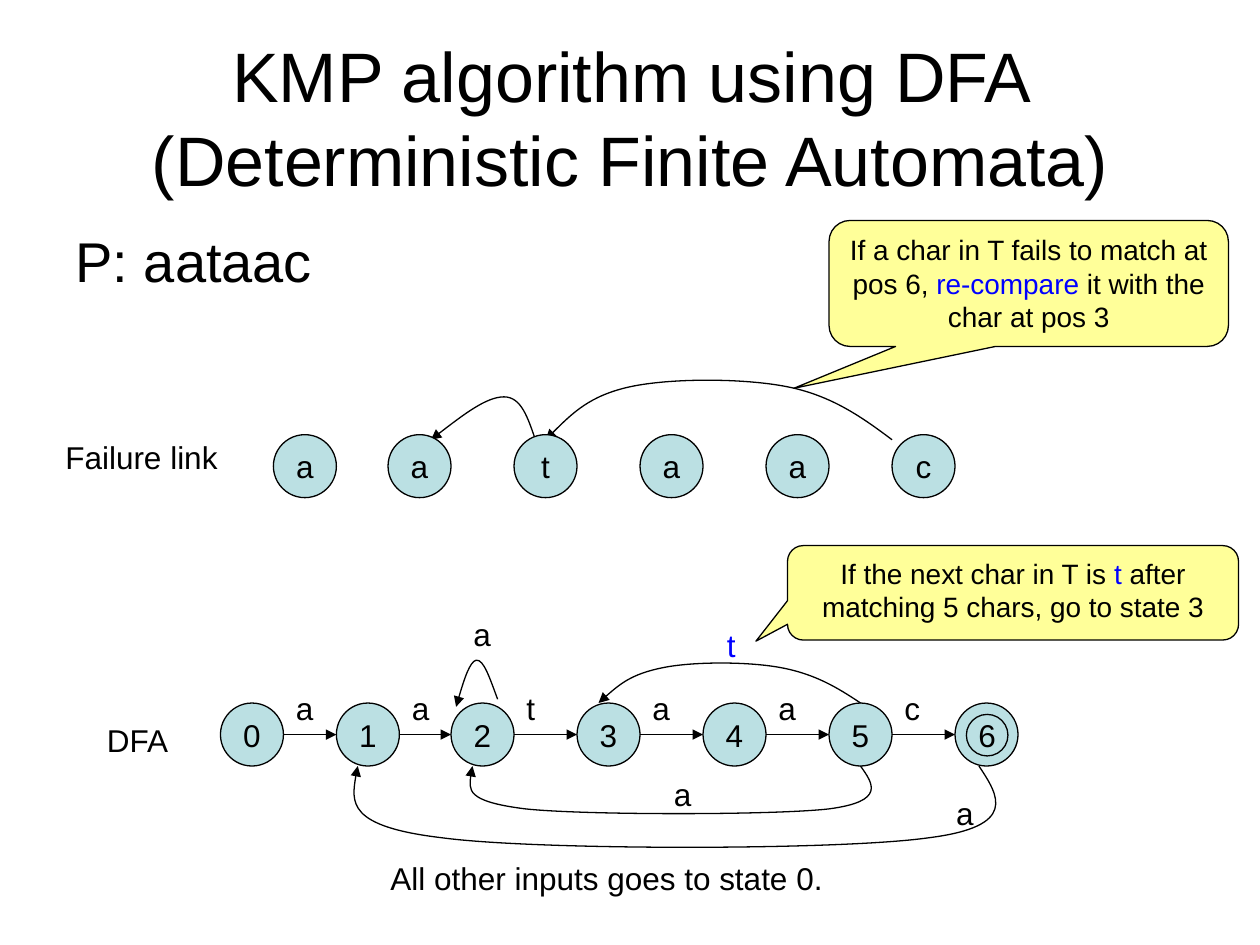
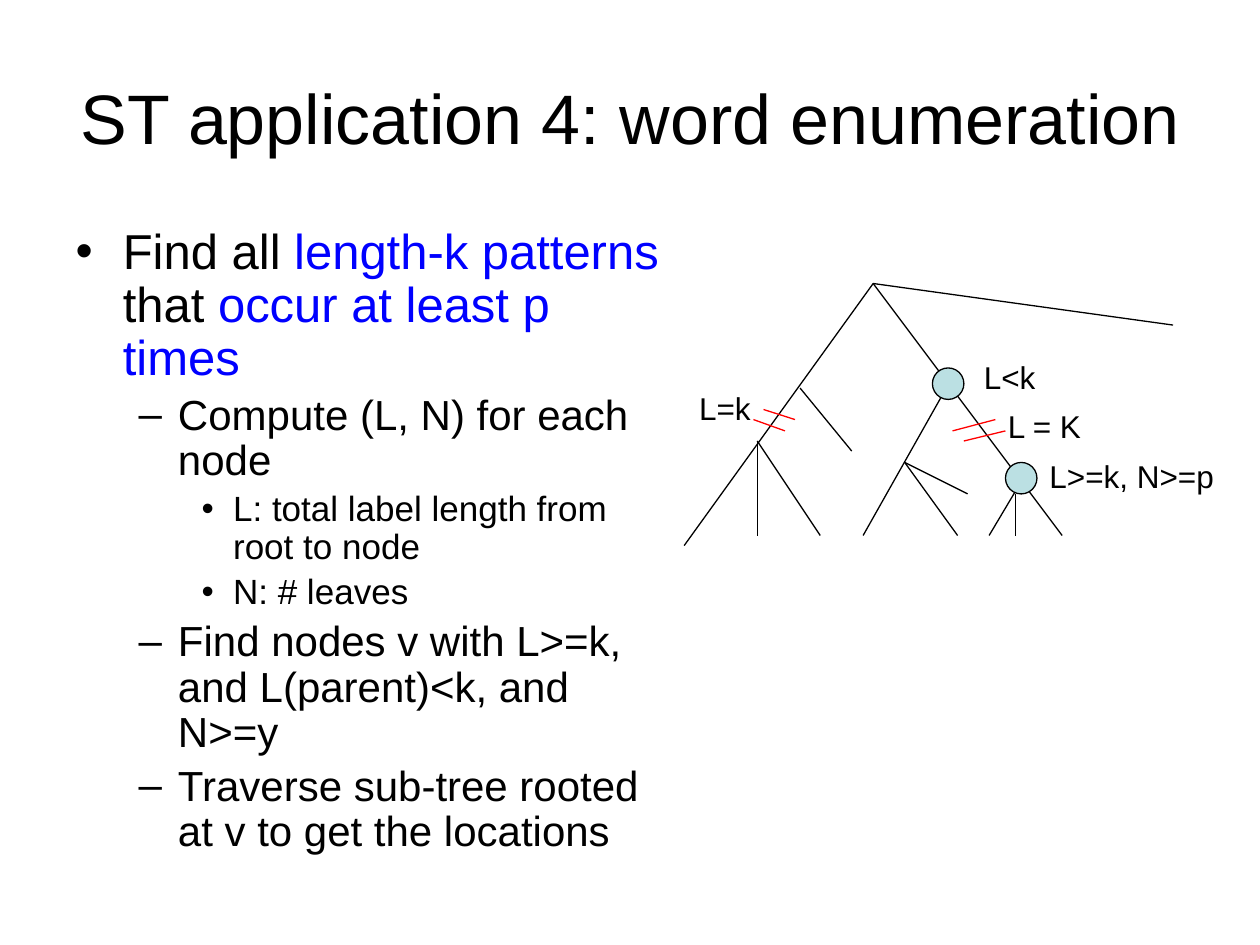
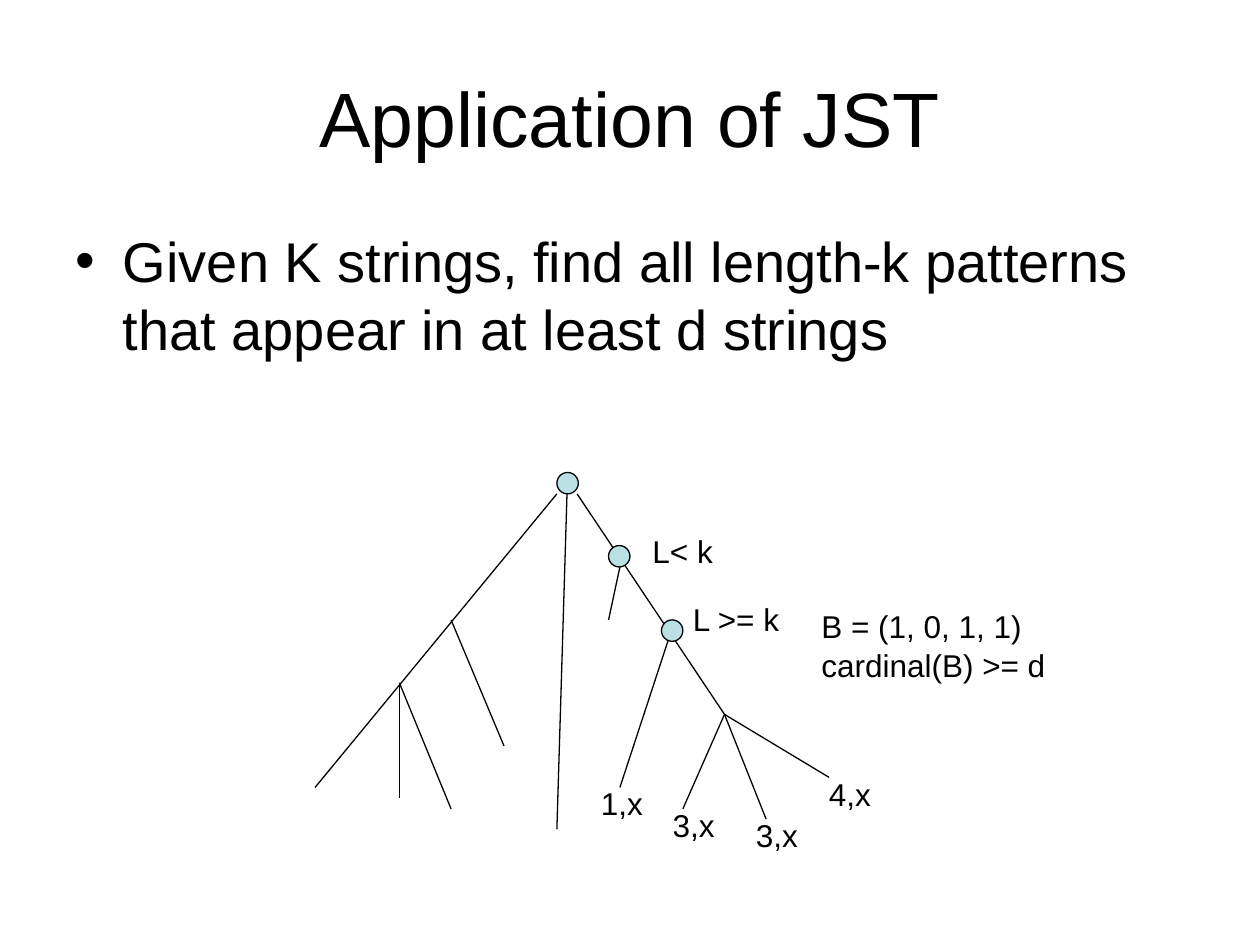
from lxml.etree import SubElement
from pptx import Presentation
from pptx.dml.color import RGBColor
from pptx.enum.shapes import MSO_CONNECTOR as CONN, MSO_SHAPE as SHAPE
from pptx.enum.text import MSO_ANCHOR as ANCHOR, MSO_AUTO_SIZE as FIT, PP_ALIGN as ALIGN
from pptx.oxml.ns import qn
from pptx.util import Inches, Pt

BLACK, BLUE, RED = "000000", "0000FF", "FF0000"
NODE, NOTE = "BBE0E3", "FFFF99"
TITLE_BOX = (0.5, 0.3, 9, 1.25)
BODY_TOP, BODY_HEIGHT = 1.75, 4.95
NODE_SIZE = 0.5
LEAF_WIDTH = 0.55
LEVEL_SIZES = (28, 24, 20)
CENTRED = {"vertical_anchor": ANCHOR.MIDDLE, "word_wrap": False}
TOP_WRAPPED = {"vertical_anchor": ANCHOR.TOP, "word_wrap": True}
ONE_LINE = {"word_wrap": False, "auto_size": FIT.SHAPE_TO_FIT_TEXT}


def rgb(color):
    """Turn a hex string into a colour."""
    return RGBColor.from_string(color)


def apply(obj, values):
    """Set each named attribute on an object."""
    for name, value in values.items():
        setattr(obj, name, value)


def inches(*values):
    """Convert numbers to lengths."""
    return [Inches(v) for v in values]


def add_runs(p, parts, size):
    """Write strings or (string, colour) pairs into a paragraph."""
    for part in parts:
        text, color = (part, BLACK) if isinstance(part, str) else part
        r = p.add_run()
        r.text = text
        apply(r.font, {"name": "Arial", "size": Pt(size)})
        r.font.color.rgb = rgb(color)


def style_line(line, color=BLACK, arrow=False):
    """Give an outline its colour and width, and an arrowhead at its end."""
    line.color.rgb = rgb(color)
    line.width = Pt(0.75)
    if arrow:
        SubElement(line._get_or_add_ln(), qn("a:tailEnd"), type="triangle")


def add_shape(slide, kind, box, fill, parts=(), size=18, frame=CENTRED):
    """Add a filled preset shape with centred text."""
    sp = slide.shapes.add_shape(kind, *inches(*box))
    sp.shadow.inherit = False
    sp.fill.solid()
    sp.fill.fore_color.rgb = rgb(fill)
    style_line(sp.line)
    apply(sp.text_frame, frame)
    p = sp.text_frame.paragraphs[0]
    p.alignment = ALIGN.CENTER
    add_runs(p, parts, size)
    return sp


def add_node(slide, x, y, size=NODE_SIZE, text=""):
    """Add a round node."""
    add_shape(slide, SHAPE.OVAL, (x, y, size, size), NODE, [text] if text else [])


def add_callout(slide, box, tip, parts):
    """Add a yellow callout whose pointer goes to the tip."""
    sp = add_shape(slide, SHAPE.ROUNDED_RECTANGULAR_CALLOUT, box, NOTE, parts, 16, TOP_WRAPPED)
    for i, value in enumerate(tip):
        sp.adjustments[i] = value


def add_label(slide, x, y, text, width=0.34, color=BLACK):
    """Add a one-line label."""
    tf = slide.shapes.add_textbox(*inches(x, y, width, 0.4)).text_frame
    apply(tf, ONE_LINE)
    add_runs(tf.paragraphs[0], [(text, color)], 18)


def add_line(slide, start, end, color=BLACK, arrow=False):
    """Add a straight line."""
    line = slide.shapes.add_connector(CONN.STRAIGHT, *inches(*start, *end))
    style_line(line.line, color, arrow)
    SubElement(line.element.spPr, qn("a:effectLst"))


def add_curve(slide, x, y, points):
    """Add an arrow of cubic curves from a start and triples of points."""
    start, *rest = [inches(x + dx, y + dy) for dx, dy in points]
    builder = slide.shapes.build_freeform(*start)
    builder.add_line_segments(rest, close=False)
    sp = builder.convert_to_shape()
    sp.shadow.inherit = False
    sp.fill.background()
    style_line(sp.line, arrow=True)
    steps = list(sp.element.iter(qn("a:lnTo")))
    outline = steps[0].getparent()
    for i in range(0, len(steps), 3):
        curve = SubElement(outline, qn("a:cubicBezTo"))
        for step in steps[i:i + 3]:
            curve.append(step[0])
            outline.remove(step)


def place(sp, box):
    """Move a placeholder to a box and return its text frame."""
    apply(sp, dict(zip(("left", "top", "width", "height"), inches(*box))))
    sp.text_frame.auto_size = FIT.NONE
    return sp.text_frame


def add_slide(prs, title, title_size=40):
    """Add a slide with a centred title."""
    slide = prs.slides.add_slide(prs.slide_layouts[1])
    tf = place(slide.shapes.title, TITLE_BOX)
    tf.vertical_anchor = ANCHOR.MIDDLE
    tf.paragraphs[0].alignment = ALIGN.CENTER
    add_runs(tf.paragraphs[0], [title], title_size)
    return slide


def fill_body(slide, items, width=9, sizes=(32,), spacing=None, bullets=True):
    """Fill the body placeholder with (level, parts) items."""
    tf = place(slide.placeholders[1], (0.5, BODY_TOP, width, BODY_HEIGHT))
    for i, (level, parts) in enumerate(items):
        p = tf.add_paragraph() if i else tf.paragraphs[0]
        apply(p, {"level": level, "line_spacing": spacing})
        if not bullets:
            SubElement(p._p.get_or_add_pPr(), qn("a:buNone"))
        add_runs(p, parts, sizes[level])


def draw_failure_links(slide, x, y):
    """Draw the pattern's nodes and failure links from the first node's corner."""
    add_curve(slide, x, y, [(2.08, 0.04), (2.02, -0.13), (1.97, -0.3), (1.83, -0.3),
                            (1.69, -0.3), (1.47, -0.13), (1.25, 0.04)])
    add_curve(slide, x, y, [(4.91, 0.04), (4.67, -0.14), (4.43, -0.31), (4.08, -0.38),
                            (3.73, -0.45), (3.15, -0.45), (2.83, -0.38),
                            (2.51, -0.31), (2.34, -0.14), (2.16, 0.04)])
    for i, char in enumerate("aataac"):
        add_node(slide, x + (i - 0.09 if i else 0), y, text=char)
    add_label(slide, x - 1.75, y - 0.02, "Failure link", 1.41)
    add_callout(slide, (x + 4.41, y - 1.7, 3.17, 1), (-0.588, 0.832, 0.167),
                ["If a char in T fails to match at pos 6, ", ("re-compare", BLUE),
                 " it with the char at pos 3"])


def draw_dfa(slide, x, y):
    """Draw the automaton from the corner of state 0."""
    lefts = [x, x + 0.92] + [x + 1.83 + i for i in range(5)]
    middle = y + NODE_SIZE / 2
    for state, left in enumerate(lefts):
        add_node(slide, left, y, text=str(state) if state < 6 else "")
    add_node(slide, lefts[-1] + 0.09, y + 0.09, 0.33, "6")
    for char, left, following in zip("aataac", lefts, lefts[1:]):
        right = left + NODE_SIZE
        add_line(slide, (right, middle), (following, middle), arrow=True)
        add_label(slide, right, y - 0.16, char, 0.27 if char == "t" else 0.34)
    for points in (
        [(2.2, -0.03), (2.14, -0.19), (2.09, -0.35), (2.03, -0.34),
         (1.98, -0.33), (1.92, -0.15), (1.87, 0.03)],
        [(5.08, 0), (4.9, -0.12), (4.72, -0.23), (4.45, -0.28), (4.19, -0.33),
         (3.75, -0.33), (3.51, -0.28), (3.26, -0.23), (3.13, -0.12), (3, 0)],
        [(5.08, 0.5), (5.18, 0.64), (5.28, 0.78), (4.83, 0.84), (4.39, 0.89),
         (2.89, 0.89), (2.42, 0.84), (1.94, 0.78), (1.97, 0.64), (2, 0.5)],
        [(6.02, 0.5), (6.18, 0.74), (6.33, 0.98), (5.62, 1.07), (4.91, 1.17),
         (2.51, 1.17), (1.76, 1.07), (1, 0.98), (1.04, 0.74), (1.09, 0.5)],
    ):
        add_curve(slide, x, y, points)
    for dx, dy in [(1.91, -0.75), (3.5, 0.52), (5.74, 0.67)]:
        add_label(slide, x + dx, y + dy, "a")
    add_label(slide, x + 3.92, y - 0.66, "t", 0.27, BLUE)
    add_label(slide, x - 1, y + 0.09, "DFA", 0.7)
    add_label(slide, x + 1.25, y + 1.19, "All other inputs goes to state 0.", 3.63)
    add_callout(slide, (x + 4.5, y - 1.25, 3.58, 0.75), (-0.57, 0.512, 0.167),
                ["If the next char in T is ", ("t", BLUE),
                 " after matching 5 chars, go to state 3"])


def draw_tree(slide, x, y, branches, dots, dot_size, labels, cuts=()):
    """Draw a suffix tree with all parts relative to its root."""
    def at(point):
        return x + point[0], y + point[1]

    for start, ends in branches.items():
        for end in ends:
            add_line(slide, at(start), at(end))
    for dot in dots:
        add_node(slide, *at(dot), dot_size)
    for start, end in cuts:
        add_line(slide, at(start), at(end), RED)
    for dx, dy, width, text in labels:
        add_label(slide, *at((dx, dy)), text, width)


def kmp_slide(prs):
    """Build the slide on KMP with an automaton."""
    slide = add_slide(prs, "KMP algorithm using DFA (Deterministic Finite Automata)")
    fill_body(slide, [(0, ["P: aataac"])], bullets=False)
    draw_dfa(slide, 1.75, 5.58)
    draw_failure_links(slide, 2.17, 3.45)


def enumeration_slide(prs):
    """Build the slide on word enumeration."""
    slide = add_slide(prs, "ST application 4: word enumeration")
    fill_body(slide, [
        (0, ["Find all ", ("length-k patterns", BLUE), " that ",
             ("occur at least p times", BLUE)]),
        (1, ["Compute (L, N) for each node"]),
        (2, ["L: total label length from root to node"]),
        (2, ["N: # leaves"]),
        (1, ["Find nodes v with L>=k, and L(parent)<k, and N>=y"]),
        (1, ["Traverse sub-tree rooted at v to get the locations"]),
    ], 4.83, LEVEL_SIZES, 0.9)
    branches = {
        (0, 0): [(-1.5, 2.08), (1.5, 2), (2.38, 0.33)],
        (-0.58, 0.83): [(-0.17, 1.33)],
        (-0.92, 1.25): [(-0.92, 2), (-0.42, 2)],
        (0.58, 0.83): [(-0.08, 2)],
        (0.25, 1.42): [(0.67, 2), (0.75, 1.67)],
        (1.17, 1.58): [(0.92, 2)],
        (1.13, 1.67): [(1.13, 2)],
    }
    cuts = [((0.72, 1.25), (1.05, 1.17)), ((0.63, 1.17), (0.97, 1.08)),
            ((-0.87, 1), (-0.62, 1.08)), ((-0.95, 1.08), (-0.7, 1.17))]
    labels = [(0.78, 0.54, 0.61, "L<k"), (1.3, 1.33, 1.51, "L>=k, N>=p"),
              (0.97, 0.93, 0.79, "L = K"), (-1.48, 0.79, 0.61, "L=k")]
    draw_tree(slide, 6.93, 2.25, branches, [(0.47, 0.67), (1.05, 1.42)], 0.25, labels, cuts)


def jst_slide(prs):
    """Build the slide on the joint suffix tree."""
    slide = add_slide(prs, "Application of JST", 44)
    fill_body(slide, [(0, ["Given K strings, find all length-k patterns "
                           "that appear in at least d strings"])])
    branches = {
        (-0.08, 0.17): [(-2, 2.5)],
        (0, 0.17): [(-0.08, 2.83)],
        (0.08, 0.17): [(1.25, 1.92)],
        (-0.92, 1.17): [(-0.5, 2.17)],
        (-1.33, 1.67): [(-1.33, 2.58), (-0.92, 2.67)],
        (0.42, 0.75): [(0.33, 1.17)],
        (0.83, 1.25): [(0.42, 2.5)],
        (1.25, 1.92): [(0.92, 2.67), (1.58, 2.75), (2.08, 2.42)],
    }
    labels = [(0.58, 0.42, 0.68, "L< k"), (0.9, 0.96, 0.9, "L >= k"),
              (1.92, 1.02, 1.79, "B = (1, 0, 1, 1)"), (1.92, 1.33, 1.98, "cardinal(B) >= d"),
              (0.17, 2.42, LEAF_WIDTH, "1,x"), (0.74, 2.6, LEAF_WIDTH, "3,x"),
              (1.4, 2.68, LEAF_WIDTH, "3,x"), (1.98, 2.35, LEAF_WIDTH, "4,x")]
    dots = [(-0.08, 0), (0.33, 0.58), (0.75, 1.17)]
    draw_tree(slide, 4.5, 3.75, branches, dots, 0.17, labels)


def main():
    """Build and save the presentation."""
    prs = Presentation()
    apply(prs, {"slide_width": Inches(10), "slide_height": Inches(7.5)})
    for build in (kmp_slide, enumeration_slide, jst_slide):
        build(prs)
    prs.save("out.pptx")


if __name__ == "__main__":
    main()
